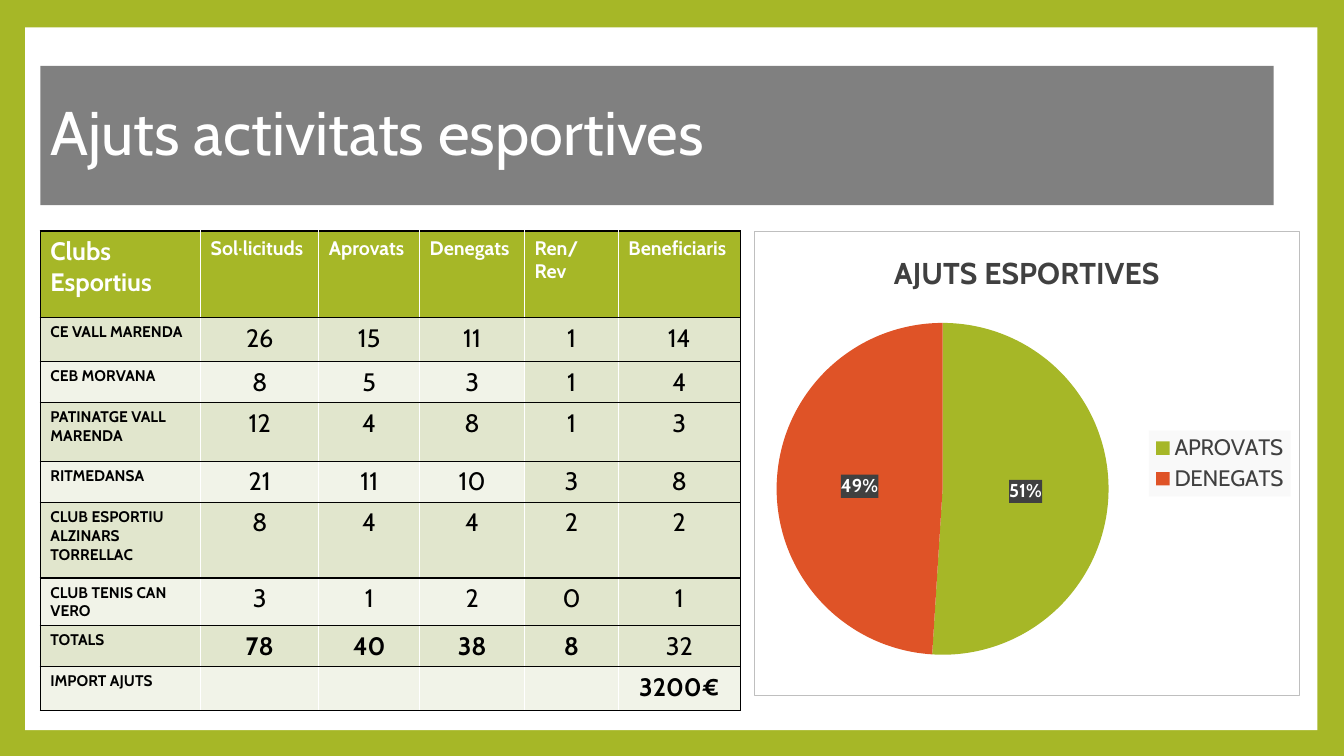
"""Build the slide on grants for sports activities, with a table and a pie chart."""
from lxml import etree
from pptx import Presentation
from pptx import util as u
from pptx.chart.data import CategoryChartData
from pptx.dml.color import RGBColor
from pptx.enum import chart as charts, shapes, text
from pptx.oxml import parse_xml
from pptx.oxml.ns import nsdecls, qn

Pt = u.Pt
FONT = "Cabin"
COLORS = {
    "green": "A6B727", "orange": "DF5327", "white": "FFFFFF", "black": "000000",
    "gray": "808080", "dark": "404040", "frame": "BFBFBF", "legend": "F9F9F9",
    "band": "E1E6CD", "light": "F1F3E8",
}
HEADERS = ["Clubs Esportius", "Sol·licituds", "Aprovats", "Denegats", "Ren/Rev", "Beneficiaris"]
ROWS = [
    ["CE VALL MARENDA", "26", "15", "11", "1", "14"],
    ["CEB MORVANA", "8", "5", "3", "1", "4"],
    ["PATINATGE VALL MARENDA", "12", "4", "8", "1", "3"],
    ["RITMEDANSA", "21", "11", "10", "3", "8"],
    ["CLUB ESPORTIU ALZINARS TORRELLAC", "8", "4", "4", "2", "2"],
    ["CLUB TENIS CAN VERO", "3", "1", "2", "0", "1"],
    ["TOTALS", "78", "40", "38", "8", "32"],
    ["IMPORT AJUTS", "", "", "", "", "3200€"],
]
COLUMN_WIDTHS = [114.5, 84.5, 72, 75, 67, 87]
ROW_HEIGHTS = [62, 31.5, 27.5, 42, 27.5, 54, 31.5, 27.5, 31.5]
TOTALS_ROW = 7
IMPORT_ROW = 8


def rgb(name):
    return RGBColor.from_string(COLORS[name])


def paint(item, color):
    item.fill.solid()
    item.fill.fore_color.rgb = rgb(color)


def style_font(font, size, color, bold=False):
    font.name = FONT
    font.size = Pt(size)
    font.bold = bold
    font.color.rgb = rgb(color)


def add_panel(page, left, top, width, height):
    panel = page.shapes.add_shape(
        shapes.MSO_SHAPE.RECTANGLE, Pt(left), Pt(top), Pt(width), Pt(height))
    panel.shadow.inherit = False
    paint(panel, "white")
    panel.line.fill.background()
    page.shapes._spTree.insert(2, panel._element)


def set_title(page, words, left, top, width, height):
    title = page.shapes.title
    title.left, title.top, title.width, title.height = map(Pt, (left, top, width, height))
    paint(title, "gray")
    frame = title.text_frame
    frame.text = words
    frame.vertical_anchor = text.MSO_ANCHOR.MIDDLE
    para = frame.paragraphs[0]
    para.alignment = text.PP_ALIGN.LEFT
    para.line_spacing = 0.9
    style_font(para.runs[0].font, 44, "white")


def set_borders(cell, sides):
    properties = cell._tc.get_or_add_tcPr()
    for index, (side, color) in enumerate(sides.items()):
        line = parse_xml(
            f'<a:{side} {nsdecls("a")} w="12700"><a:solidFill>'
            f'<a:srgbClr val="{COLORS[color]}"/></a:solidFill></a:{side}>')
        properties.insert(index, line)


def cell_sides(row, column):
    inner = None if row == TOTALS_ROW else "white"
    sides = {
        "lnL": "black" if column == 0 else inner,
        "lnR": "black" if column == len(HEADERS) - 1 else inner,
        "lnT": "black",
        "lnB": "black",
    }
    return {side: color for side, color in sides.items() if color}


def cell_fill(row, column):
    if row == 0:
        return "green"
    if row % 2 or (column >= 4 and row != IMPORT_ROW):
        return "band"
    return "light"


def cell_font(row, column):
    if row == 0:
        return (18 if column == 0 else 14), "white", True
    if column == 0:
        return 11, "black", True
    bold = row == IMPORT_ROW or (row == TOTALS_ROW and column < 5)
    return 18, "black", bold


def add_grants_table(page, left, top):
    rows = [HEADERS] + ROWS
    table = page.shapes.add_table(
        len(rows), len(HEADERS), Pt(left), Pt(top),
        Pt(sum(COLUMN_WIDTHS)), Pt(sum(ROW_HEIGHTS))).table
    table.horz_banding = False
    for column, width in zip(table.columns, COLUMN_WIDTHS):
        column.width = Pt(width)
    for row, height in zip(table.rows, ROW_HEIGHTS):
        row.height = Pt(height)
    for row, values in enumerate(rows):
        for column, value in enumerate(values):
            cell = table.cell(row, column)
            paint(cell, cell_fill(row, column))
            set_borders(cell, cell_sides(row, column))
            if not value:
                continue
            cell.text = value
            para = cell.text_frame.paragraphs[0]
            if row and column:
                para.alignment = text.PP_ALIGN.CENTER
            style_font(para.runs[0].font, *cell_font(row, column))


def add_background(anchor, fill, line=None):
    outline = "<a:ln><a:noFill/></a:ln>"
    if line:
        outline = (f'<a:ln w="9525"><a:solidFill><a:srgbClr val="{COLORS[line]}"/>'
                   "</a:solidFill></a:ln>")
    anchor.addnext(parse_xml(
        f'<c:spPr {nsdecls("c", "a")}><a:solidFill><a:srgbClr val="{COLORS[fill]}"/>'
        f"</a:solidFill>{outline}</c:spPr>"))


def place_plot(chart, left, top, width, height):
    area = chart._chartSpace.chart.plotArea
    for old in area.findall(qn("c:layout")):
        area.remove(old)
    layout = etree.Element(qn("c:layout"))
    manual = etree.SubElement(layout, qn("c:manualLayout"))
    settings = {"layoutTarget": "inner", "xMode": "edge", "yMode": "edge",
                "x": left, "y": top, "w": width, "h": height}
    for tag, value in settings.items():
        etree.SubElement(manual, qn(f"c:{tag}")).set("val", str(value))
    area.insert(0, layout)


def add_grants_pie(page, left, top, width, height):
    data = CategoryChartData()
    data.categories = ["APROVATS", "DENEGATS"]
    data.add_series("Series 1", (51, 49))
    chart = page.shapes.add_chart(
        charts.XL_CHART_TYPE.PIE, Pt(left), Pt(top), Pt(width), Pt(height), data).chart
    style_font(chart.font, 10, "black")
    add_background(chart._chartSpace.chart, "white", "frame")
    place_plot(chart, 0.04, 0.16, 0.61, 0.79)

    chart.has_title = True
    chart.chart_title.include_in_layout = False
    frame = chart.chart_title.text_frame
    frame.text = "AJUTS ESPORTIVES"
    style_font(frame.paragraphs[0].runs[0].font, 21.6, "dark", True)

    chart.has_legend = True
    legend = chart.legend
    legend.position = charts.XL_LEGEND_POSITION.RIGHT
    legend.include_in_layout = False
    style_font(legend.font, 16, "dark")
    add_background(legend._element.find(qn("c:overlay")), "legend")

    plot = chart.plots[0]
    plot.vary_by_categories = True
    series = plot.series[0]
    for index, color in enumerate(("green", "orange")):
        paint(series.points[index].format, color)
    labels = series.data_labels
    labels.show_percentage = True
    labels.show_value = False
    labels.number_format = "0%"
    labels.number_format_is_linked = False
    labels.position = charts.XL_LABEL_POSITION.CENTER
    style_font(labels.font, 13.3, "white", True)
    add_background(labels._element.find(qn("c:numFmt")), "dark")


def main():
    deck = Presentation()
    deck.slide_width, deck.slide_height = Pt(960), Pt(540)
    page = deck.slides.add_slide(deck.slide_layouts[5])
    paint(page.background, "green")
    add_panel(page, 18, 19.5, 923, 502)
    set_title(page, "Ajuts activitats esportives", 28.8, 47, 881, 99.5)
    add_grants_table(page, 28.8, 165)
    add_grants_pie(page, 538.8, 165, 389.5, 332)
    deck.save("out.pptx")


if __name__ == "__main__":
    main()
